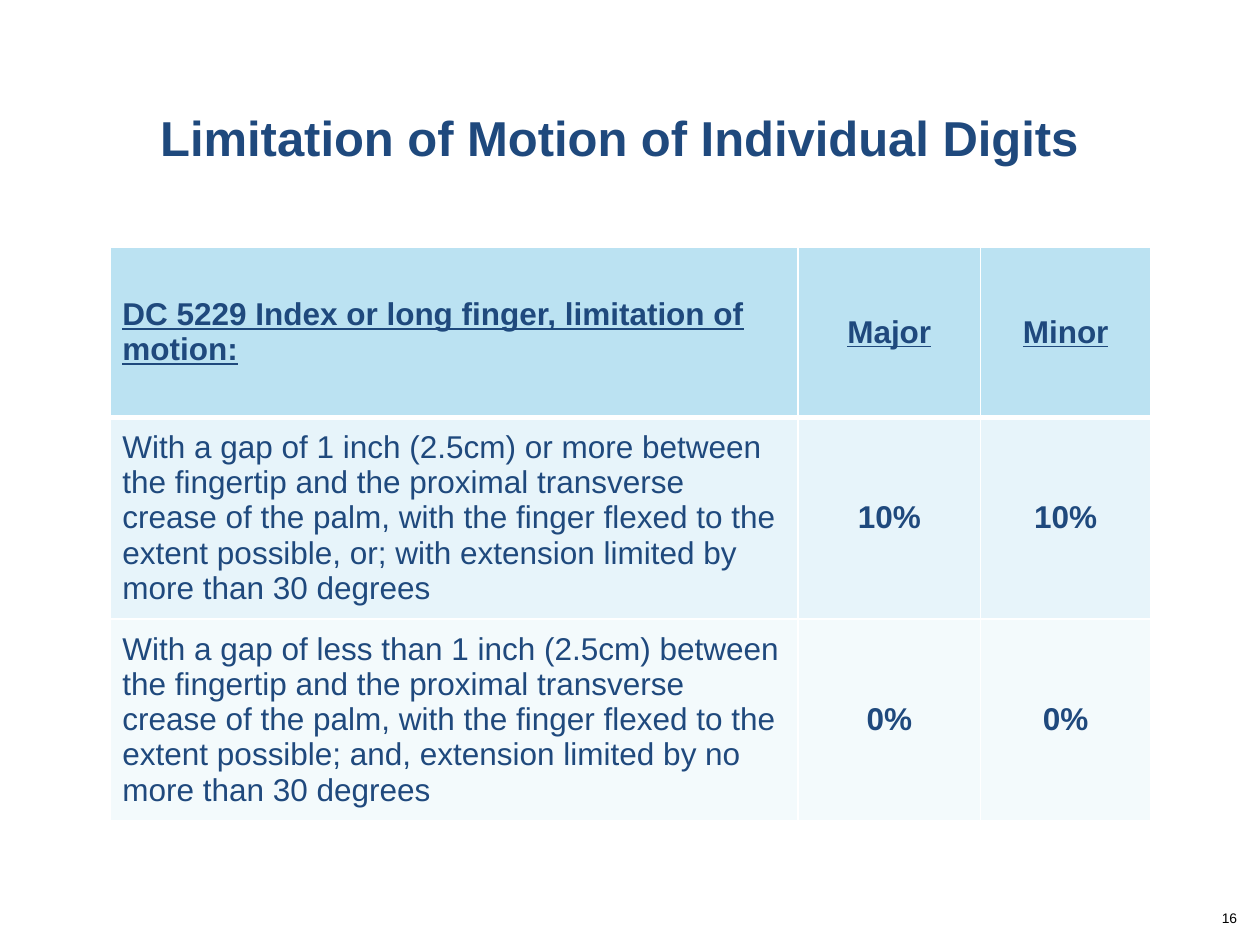
from lxml import etree
from pptx import Presentation
from pptx.dml.color import RGBColor
from pptx.enum import text as t
from pptx.oxml.ns import qn
from pptx.util import Pt

NAVY = "1F497D"
WHITE = "FFFFFF"
ROW_FILLS = ["BBE2F2", "E7F4FA", "F3FAFC"]
COLUMN_WIDTHS = [393.2, 104.4, 97.2]
ROW_HEIGHTS = [97.2, 108, 108]
RATINGS = [
    ["DC 5229 Index or long finger, limitation of motion:", "Major", "Minor"],
    ["With a gap of 1 inch (2.5cm) or more between the fingertip and the "
     "proximal transverse crease of the palm, with the finger flexed to the "
     "extent possible, or; with extension limited by more than 30 degrees",
     "10%", "10%"],
    ["With a gap of less than 1 inch (2.5cm) between the fingertip and the "
     "proximal transverse crease of the palm, with the finger flexed to the "
     "extent possible; and, extension limited by no more than 30 degrees",
     "0%", "0%"],
]


def rgb(value):
    return RGBColor.from_string(value)


def write(frame, words, size=18, color=NAVY, bold=False, underline=False,
          align=t.PP_ALIGN.LEFT):
    frame.word_wrap = True
    paragraph = frame.paragraphs[0]
    paragraph.alignment = align
    run = paragraph.add_run()
    run.text = words
    font = run.font
    font.name, font.size = "Arial", Pt(size)
    font.bold, font.underline = bold, underline
    font.color.rgb = rgb(color)


def set_borders(cell, bottom):
    """Draw white cell edges, with the bottom one of the given width."""
    properties = cell._tc.get_or_add_tcPr()
    edges = {"a:lnL": 1, "a:lnR": 1, "a:lnT": 1, "a:lnB": bottom}
    for position, (tag, width) in enumerate(edges.items()):
        edge = etree.Element(qn(tag), w=str(Pt(width)))
        fill = etree.SubElement(edge, qn("a:solidFill"))
        etree.SubElement(fill, qn("a:srgbClr"), val=WHITE)
        properties.insert(position, edge)


def add_title(slide, left, top, width, height):
    title = slide.shapes.add_textbox(Pt(left), Pt(top), Pt(width), Pt(height))
    title.text_frame.vertical_anchor = t.MSO_ANCHOR.MIDDLE
    write(title.text_frame, "Limitation of Motion of Individual Digits",
          size=28, bold=True, align=t.PP_ALIGN.CENTER)


def add_page_number(slide, left, top, width, height):
    number = slide.shapes.add_textbox(Pt(left), Pt(top), Pt(width), Pt(height))
    number.text_frame.margin_top = 0
    write(number.text_frame, "16", size=7.9, color="000000",
          align=t.PP_ALIGN.RIGHT)


def add_ratings_table(slide, left, top, width, height):
    table = slide.shapes.add_table(
        len(RATINGS), len(COLUMN_WIDTHS),
        Pt(left), Pt(top), Pt(width), Pt(height)).table
    for column, share in zip(table.columns, COLUMN_WIDTHS):
        column.width = Pt(width * share / sum(COLUMN_WIDTHS))
    for row, share in zip(table.rows, ROW_HEIGHTS):
        row.height = Pt(height * share / sum(ROW_HEIGHTS))
    for r, entries in enumerate(RATINGS):
        for c, entry in enumerate(entries):
            header, rating = r == 0, c > 0
            cell = table.cell(r, c)
            cell.fill.solid()
            cell.fill.fore_color.rgb = rgb(ROW_FILLS[r])
            cell.vertical_anchor = t.MSO_ANCHOR.MIDDLE
            # The edge below the header is shared with the first body row.
            set_borders(cell, bottom=3 if header else 1)
            if r == 1:
                cell._tc.tcPr.find(qn("a:lnT")).set("w", str(Pt(3)))
            write(cell.text_frame, entry, bold=header or rating,
                  underline=header,
                  align=t.PP_ALIGN.CENTER if rating else t.PP_ALIGN.LEFT)


def main():
    deck = Presentation()
    deck.slide_width, deck.slide_height = Pt(720), Pt(540)
    slide = deck.slides.add_slide(deck.slide_layouts[6])
    add_title(slide, 0, 36, 708, 84)
    add_page_number(slide, 546, 520, 168, 28.8)
    add_ratings_table(slide, 62.8, 141.2, sum(COLUMN_WIDTHS), sum(ROW_HEIGHTS))
    deck.save("out.pptx")


if __name__ == "__main__":
    main()
